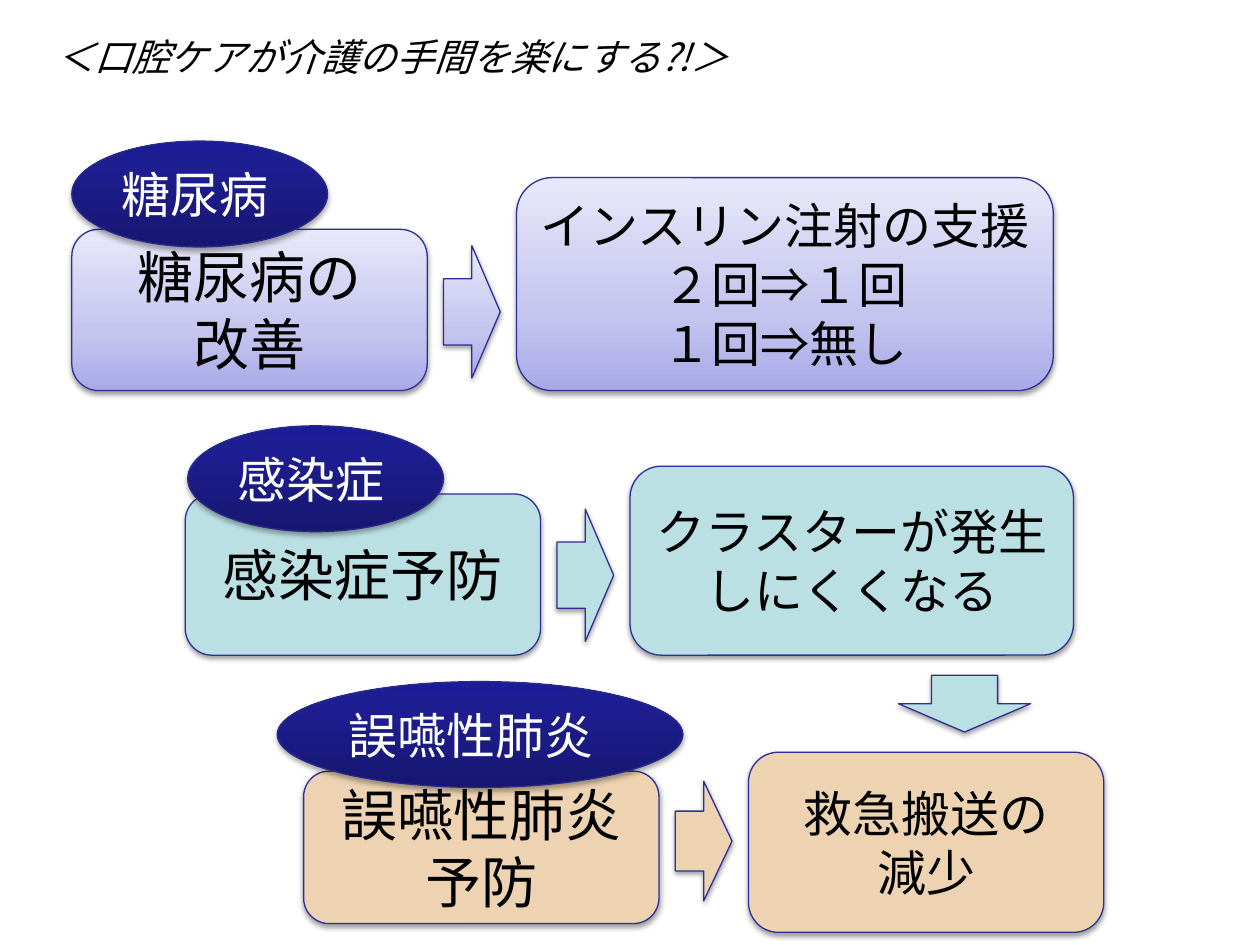
from lxml import etree
from pptx import Presentation, util as u
from pptx.dml.color import RGBColor
from pptx.enum import shapes, text
from pptx.oxml.ns import qn

FONT = "Noto Sans CJK JP"
TITLE = "＜口腔ケアが介護の手間を楽にする⁈＞"
TEAL, TAN = "BBE0E3", "EDD3B1"
LILAC = [(0, "A9A9E9"), (35, "C4C4EF"), (100, "E8E8FA")]
NAVY = [(0, "171771"), (80, "1E1E93"), (100, "1C1C96")]
BOX_W, HEAD_W, GAP = 2.82, 0.45, 0.13

ROWS = [
    dict(fill=TEAL, left=1.47, cause=(3.92, 1.28, ["感染症予防"]),
         effect=(3.7, 3.52, 1.5, ["クラスターが発生", "しにくくなる"]),
         arrow=(4.04, 1.05), down=(7.43, 5.06)),
    dict(fill=LILAC, left=0.57, cause=(1.82, 1.28, ["糖尿病の", "改善"]),
         effect=(1.41, 4.26, 1.69,
                 ["インスリン注射の支援", "２回⇒１回", "１回⇒無し"]),
         arrow=(1.95, 1.05)),
    dict(fill=TAN, left=2.41, cause=(6.12, 1.21, ["誤嚥性肺炎予防"]),
         effect=(5.97, 2.82, 1.43, ["救急搬送の", "減少"]),
         arrow=(6.2, 0.95)),
]
LABELS = [
    ("糖尿病", 0.57, 1.12, 2.03),
    ("感染症", 1.49, 3.38, 2.03),
    ("誤嚥性肺炎", 2.2, 5.41, 3.22),
]
LABEL_H = 0.84
KIND = shapes.MSO_SHAPE


def rgb(code):
    return RGBColor.from_string(code)


def node(up, tag, **attrs):
    return etree.SubElement(up, qn("a:" + tag), attrs)


def tint(parent, code, **attrs):
    return node(parent, "srgbClr", val=code, **attrs)


def paint(shape, fill):
    if isinstance(fill, str):
        shape.fill.solid()
        shape.fill.fore_color.rgb = rgb(fill)
        return
    shape.fill.gradient()
    shape.fill.gradient_angle = 90
    stops = shape._element.spPr.find(qn("a:gradFill")).find(qn("a:gsLst"))
    for old in list(stops):
        stops.remove(old)
    for pos, code in fill:
        tint(node(stops, "gs", pos=str(pos * 1000)), code)


def shade(shape, dist, alpha):
    shape.shadow.inherit = False
    fx = shape._element.spPr.find(qn("a:effectLst"))
    out = node(fx, "outerShdw", blurRad=str(u.Pt(3.1)), dist=str(u.Pt(dist)),
               dir="5400000", rotWithShape="0")
    node(tint(out, "000000"), "alpha", val=str(alpha * 1000))


def draw(home, kind, place, fill, line="2F2F98", dist=1.6, alpha=38):
    shape = home.shapes.add_shape(kind, *map(u.Inches, place))
    paint(shape, fill)
    shape.line.color.rgb = rgb(line)
    shape.line.width = u.Pt(0.75)
    shade(shape, dist, alpha)
    return shape


def write(shape, lines, size, color="000000", align="CENTER", italic=False):
    frame = shape.text_frame
    frame.word_wrap = True
    frame.vertical_anchor = text.MSO_ANCHOR.MIDDLE
    for i, words in enumerate(lines):
        para = frame.add_paragraph() if i else frame.paragraphs[0]
        para.alignment = getattr(text.PP_ALIGN, align)
        para.line_spacing = u.Pt(round(size * 1.2, 1))
        run = para.add_run()
        run.text = words
        font = run.font
        font.size, font.name, font.italic = u.Pt(size), FONT, italic
        font.color.rgb = rgb(color)
        node(run._r.get_or_add_rPr(), "ea", typeface=FONT)


def add_row(slide, fill, left, cause, effect, arrow, down=None):
    group = slide.shapes.add_group_shape()
    top, high, lines = cause
    box = draw(group, KIND.ROUNDED_RECTANGLE, (left, top, BOX_W, high), fill)
    write(box, lines, 32)
    head = left + BOX_W + GAP
    top, wide, high, lines = effect
    place = (head + HEAD_W + GAP, top, wide, high)
    write(draw(group, KIND.ROUNDED_RECTANGLE, place, fill), lines, 28)
    top, high = arrow
    draw(group, KIND.RIGHT_ARROW, (head, top, HEAD_W, high), fill)
    if down:
        turn = draw(group, KIND.RIGHT_ARROW, (*down, HEAD_W, high), fill)
        turn.rotation = 90


def main():
    deck = Presentation()
    deck.slide_width, deck.slide_height = u.Inches(10), u.Inches(7.5)
    slide = deck.slides.add_slide(deck.slide_layouts[6])
    title = slide.shapes.add_textbox(*map(u.Inches, (0.35, 0.25, 8.59, 0.39)))
    write(title, [TITLE], 21.6, align="LEFT", italic=True)
    for row in ROWS:
        add_row(slide, **row)
    for words, left, top, wide in LABELS:
        oval = draw(slide, KIND.OVAL, (left, top, wide, LABEL_H), NAVY,
                    line="2A2A89", dist=1.8, alpha=35)
        write(oval, [words], 28, color="FFFFFF", align="LEFT")
    deck.save("out.pptx")


if __name__ == "__main__":
    main()
